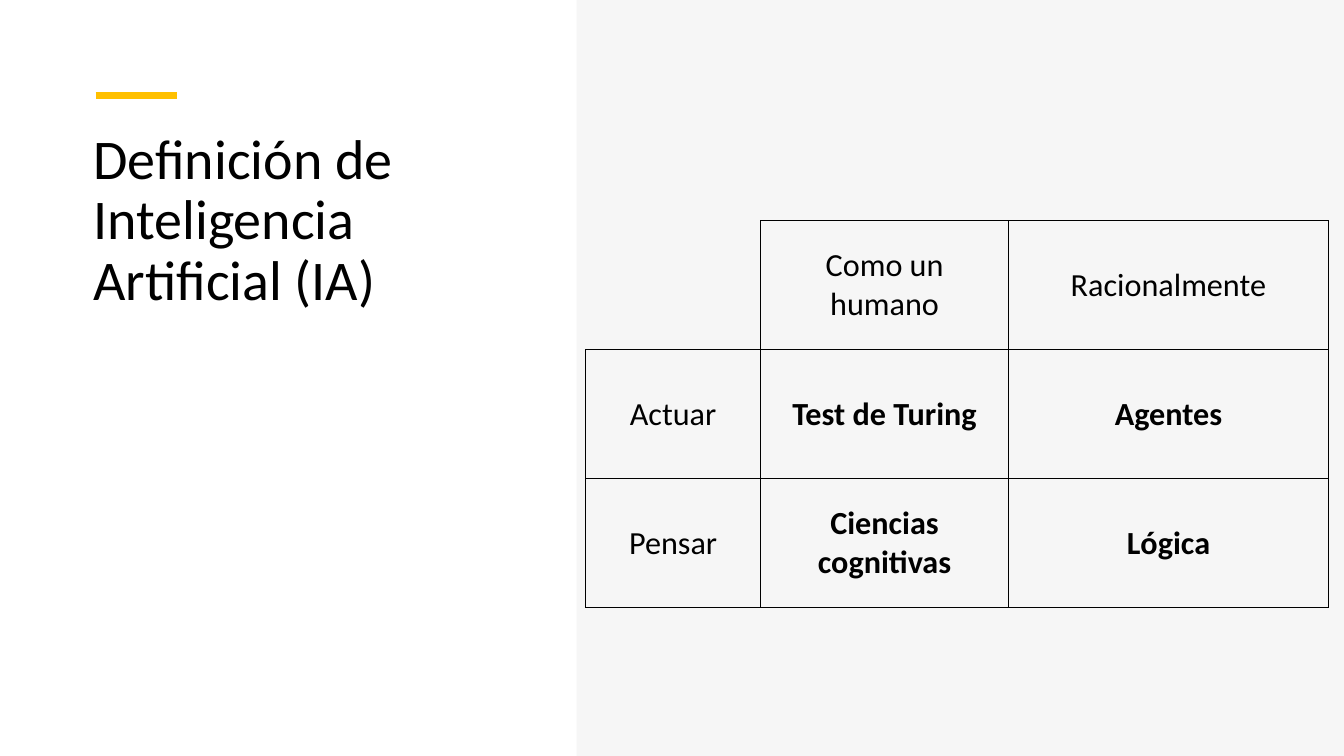
from dataclasses import dataclass

from lxml import etree
from pptx import Presentation
from pptx.dml.color import RGBColor
from pptx.enum.shapes import MSO_CONNECTOR, MSO_SHAPE
from pptx.enum.text import MSO_ANCHOR, PP_ALIGN
from pptx.oxml import parse_xml
from pptx.oxml.ns import nsdecls, qn
from pptx.slide import Slide
from pptx.table import _Cell
from pptx.text.text import _Paragraph
from pptx.util import Cm, Pt

STRAIGHT = MSO_CONNECTOR.STRAIGHT
RECTANGLE = MSO_SHAPE.RECTANGLE
MIDDLE = MSO_ANCHOR.MIDDLE
CENTER = PP_ALIGN.CENTER

BLACK = RGBColor(0x00, 0x00, 0x00)
WHITE = RGBColor(0xFF, 0xFF, 0xFF)
AMBER = RGBColor(0xFF, 0xC0, 0x00)
PALE_GRAY = RGBColor(0xF2, 0xF2, 0xF2)

SLIDE_WIDTH, SLIDE_HEIGHT = Cm(33.87), Cm(19.05)
PANEL_LEFT = Cm(14.53)
COLUMN_WIDTHS = (Cm(4.41), Cm(6.25), Cm(8.06))
ROW_HEIGHT = Cm(3.25)

TITLE_FONT = {"name": "Calibri", "size": Pt(40)}
CELL_FONT = {"name": "Calibri", "size": Pt(23)}


@dataclass(frozen=True)
class Entry:
    text: str
    bold: bool = False
    borders: str = "LRTB"


ROWS = (
    (Entry("", borders="RB"), Entry("Como un humano"), Entry("Racionalmente")),
    (Entry("Actuar"), Entry("Test de Turing", bold=True), Entry("Agentes", bold=True)),
    (Entry("Pensar"), Entry("Ciencias cognitivas", bold=True), Entry("Lógica", bold=True)),
)


def write(para: _Paragraph, text: str, formats: dict) -> None:
    span = para.add_run()
    span.text = text
    span.font.color.rgb = BLACK
    for name, value in formats.items():
        setattr(span.font, name, value)


def add_title(page: Slide) -> None:
    box = page.shapes.add_textbox(Cm(2.11), Cm(3.18), Cm(10.82), Cm(9.6))
    box.text_frame.word_wrap = True
    para = box.text_frame.paragraphs[0]
    para.line_spacing = 0.9
    write(para, "Definición de Inteligencia Artificial (IA)", TITLE_FONT)


def add_accent(page: Slide) -> None:
    accent = page.shapes.add_connector(STRAIGHT, Cm(2.41), Cm(2.41), Cm(4.45), Cm(2.41))
    accent.line.color.rgb = AMBER
    accent.line.width = Pt(4.5)
    etree.SubElement(accent._element.spPr, qn("a:effectLst"))


def add_panel(page: Slide) -> None:
    panel = page.shapes.add_shape(
        RECTANGLE, PANEL_LEFT, 0, SLIDE_WIDTH - PANEL_LEFT, SLIDE_HEIGHT
    )
    panel.shadow.inherit = False
    panel.line.fill.background()
    panel.fill.solid()
    panel.fill.fore_color.rgb = PALE_GRAY
    color = panel._element.spPr.find(f"{qn('a:solidFill')}/{qn('a:srgbClr')}")
    etree.SubElement(color, qn("a:alpha"), val="65000")


def set_borders(cell: _Cell, sides: str) -> None:
    """Draw a line on the given sides and hide the others."""
    properties = cell._tc.get_or_add_tcPr()
    for index, side in enumerate("LRTB"):
        paint = (
            f'<a:solidFill><a:srgbClr val="{BLACK}"/></a:solidFill>'
            if side in sides
            else "<a:noFill/>"
        )
        border = f'<a:ln{side} {nsdecls("a")} w="{Pt(1)}">{paint}</a:ln{side}>'
        properties.insert(index, parse_xml(border))


def fill_cell(cell: _Cell, entry: Entry) -> None:
    cell.fill.background()
    cell.vertical_anchor = MIDDLE
    set_borders(cell, entry.borders)
    para = cell.text_frame.paragraphs[0]
    para.alignment = CENTER
    if entry.text:
        write(para, entry.text, CELL_FONT | {"bold": entry.bold})


def add_definitions(page: Slide) -> None:
    frame = page.shapes.add_table(
        len(ROWS), len(COLUMN_WIDTHS), Cm(14.76), Cm(5.56),
        sum(COLUMN_WIDTHS), ROW_HEIGHT * len(ROWS),
    )
    table = frame.table
    table.first_row = False
    table.horz_banding = False
    for column, width in zip(table.columns, COLUMN_WIDTHS):
        column.width = width
    for row, entries in zip(table.rows, ROWS):
        row.height = ROW_HEIGHT
        for cell, entry in zip(row.cells, entries):
            fill_cell(cell, entry)


def main() -> None:
    deck = Presentation()
    deck.slide_width, deck.slide_height = SLIDE_WIDTH, SLIDE_HEIGHT
    page = deck.slides.add_slide(deck.slide_layouts[6])
    page.background.fill.solid()
    page.background.fill.fore_color.rgb = WHITE
    add_title(page)
    add_accent(page)
    add_panel(page)
    add_definitions(page)
    deck.save("out.pptx")


if __name__ == "__main__":
    main()
